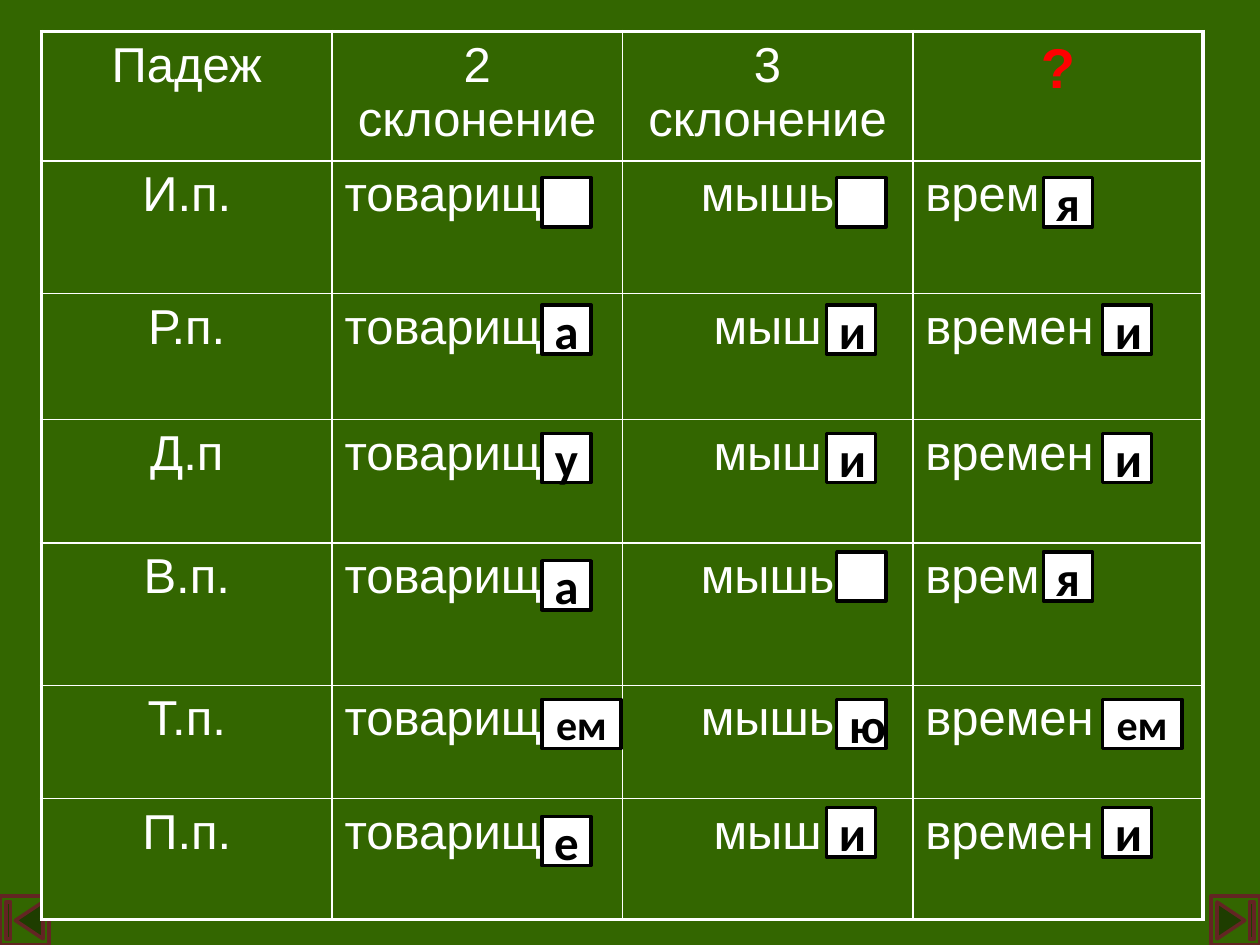
import dataclasses
import lxml.etree
import pptx
import pptx.dml.color
import pptx.enum.shapes
import pptx.enum.text
import pptx.oxml.ns
import pptx.util

HUES = {"green": "336600", "white": "FFFFFF", "black": "000000",
        "red": "FF0000", "brown": "632523"}
KINDS = pptx.enum.shapes.MSO_SHAPE
ALIGN = pptx.enum.text.PP_ALIGN
WIDTH, HEIGHT = pptx.util.Inches(10), pptx.util.Inches(7.5)
LEFT, TOP, COLUMN = 3.3, 3.33, 23.05
ROWS = [13.73, 14, 13.33, 13.07, 15.07, 12, 12.8]
TOPS = [18.8, 32.27, 45.87, 58.4, 74, 85.47]
NOUN_TOPS = [18.8, 32.27, 45.87, 59.33, 74, 86.4]
SIDE, LONG, TALL = 3.9, 6.3, 5.2
HEADS = ["Падеж", "2 склонение", "3 склонение", "?"]


@dataclasses.dataclass
class Case:
    name: str
    noun: str
    mouse: str
    time: str


CASES = [
    Case("И.п.", "товарищ|", "мышь|", "врем|я"),
    Case("Р.п.", "товарищ|а", "мыш|и", "времен|и"),
    Case("Д.п", "товарищ|у", "мыш|и", "времен|и"),
    Case("В.п.", "товарищ|а", "мышь|", "врем|я"),
    Case("Т.п.", "товарищ|ем", "мышь|ю", "времен|ем"),
    Case("П.п.", "товарищ|е", "мыш|и", "времен|и"),
]


@dataclasses.dataclass
class Style:
    size: int
    face: str
    hue: str
    bold: bool = False


BODY = Style(28, "Arial", "white")
QUERY = Style(32, "Arial", "red", True)


def color(name: str) -> pptx.dml.color.RGBColor:
    return pptx.dml.color.RGBColor.from_string(HUES[name])


def wide(share: float) -> int:
    return round(WIDTH * share / 100)


def high(share: float) -> int:
    return round(HEIGHT * share / 100)


def write(frame, text: str, style: Style, align) -> None:
    line = frame.paragraphs[0]
    line.alignment = align
    run = line.add_run()
    run.text = text
    font = run.font
    font.size, font.name, font.bold = pptx.util.Pt(style.size), style.face, style.bold
    font.color.rgb = color(style.hue)


def border(cell, side: str, points: float) -> None:
    props = cell._tc.get_or_add_tcPr()
    edge = lxml.etree.SubElement(props, pptx.oxml.ns.qn("a:ln" + side),
                                 w=str(int(pptx.util.Pt(points))))
    fill = lxml.etree.SubElement(edge, pptx.oxml.ns.qn("a:solidFill"))
    lxml.etree.SubElement(fill, pptx.oxml.ns.qn("a:srgbClr"), val=HUES["white"])


def shape(slide, kind, left: float, top: float, width: float, fill: str, line: str):
    item = slide.shapes.add_shape(kind, wide(left), high(top), wide(width), high(TALL))
    item.shadow.inherit = False
    item.fill.solid()
    item.fill.fore_color.rgb = color(fill)
    item.line.color.rgb = color(line)
    item.line.width = pptx.util.Pt(2)
    return item


def table(slide) -> None:
    words = [HEADS] + [[part.split("|")[0] for part in dataclasses.astuple(case)]
                       for case in CASES]
    grid = slide.shapes.add_table(len(ROWS), len(HEADS), wide(LEFT), high(TOP),
                                  wide(COLUMN * len(HEADS)), high(sum(ROWS))).table
    grid.first_row = grid.horz_banding = False
    for column in grid.columns:
        column.width = wide(COLUMN)
    for row, share in zip(grid.rows, ROWS):
        row.height = high(share)
    for r, texts in enumerate(words):
        for c, text in enumerate(texts):
            cell = grid.cell(r, c)
            outer = {"L": c == 0, "R": c == len(HEADS) - 1,
                     "T": r == 0, "B": r == len(ROWS) - 1}
            for side, edge in outer.items():
                border(cell, side, 2.25 if edge else 1)
            cell.fill.solid()
            cell.fill.fore_color.rgb = color("green")
            align = ALIGN.LEFT if r and c in (1, 3) else ALIGN.CENTER
            write(cell.text_frame, text, QUERY if text == "?" else BODY, align)


def ending(slide, left: float, top: float, text: str) -> None:
    pair = len(text) > 1
    box = shape(slide, KINDS.RECTANGLE, left, top, LONG if pair else SIDE,
                "white", "black")
    if text:
        box.text_frame.vertical_anchor = pptx.enum.text.MSO_ANCHOR.MIDDLE
        style = Style(24 if pair else 28, "Calibri", "black", True)
        write(box.text_frame, text, style, ALIGN.CENTER)


def main() -> None:
    deck = pptx.Presentation()
    deck.slide_width, deck.slide_height = WIDTH, HEIGHT
    slide = deck.slides.add_slide(deck.slide_layouts[6])
    slide.background.fill.solid()
    slide.background.fill.fore_color.rgb = color("green")
    for left, turn in ((0, 0), (100 - SIDE, 180)):
        button = shape(slide, KINDS.ACTION_BUTTON_BEGINNING, left, 100 - TALL, SIDE,
                       "green", "brown")
        button.rotation = turn
    table(slide)
    for case, top, first in zip(CASES, TOPS, NOUN_TOPS):
        ending(slide, 43, first, case.noun.split("|")[1])
        stem, tail = case.mouse.split("|")
        ending(slide, 66.4 if stem == "мышь" else 65.6, top, tail)
        stem, tail = case.time.split("|")
        ending(slide, 82.8 if stem == "врем" else 87.5, top, tail)
    deck.save("out.pptx")


if __name__ == "__main__":
    main()
